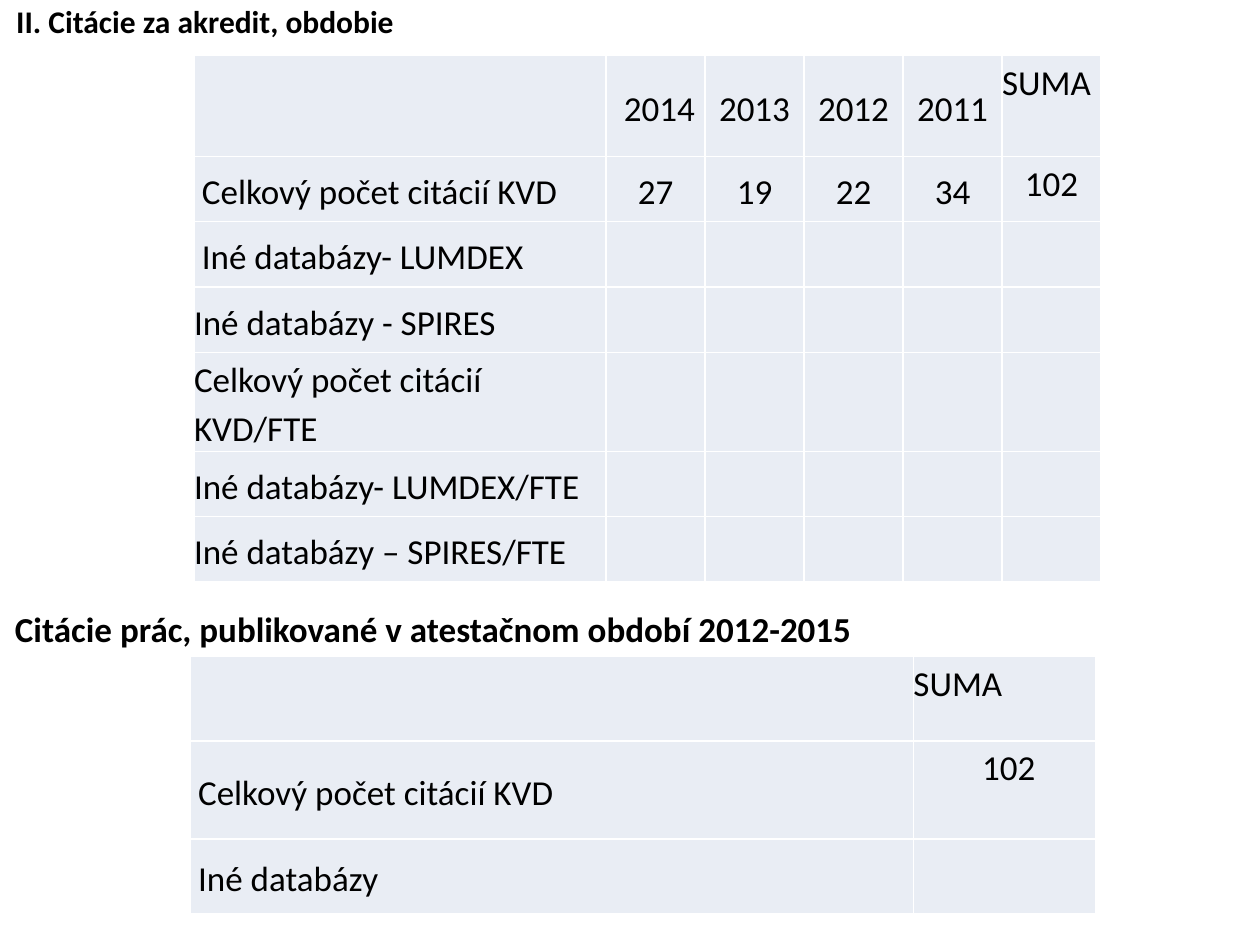
import pptx
import pptx.util
import pptx.dml.color
import pptx.enum.text
import lxml.etree
from pptx.util import Inches, Pt
from pptx.enum.text import PP_ALIGN, MSO_ANCHOR, MSO_AUTO_SIZE

BLACK = pptx.dml.color.RGBColor(0x00, 0x00, 0x00)
CELL_FILL = pptx.dml.color.RGBColor(0xE9, 0xED, 0xF4)
BORDER = pptx.dml.color.RGBColor(0xFF, 0xFF, 0xFF)
FONT = "Calibri"

HEADINGS = [
    ("II. Citácie za akredit, obdobie", 18, (0.03, -0.03, 3.22, 0.4), MSO_ANCHOR.TOP),
    ("Citácie prác, publikované v atestačnom období 2012-2015", 20,
     (0.02, 4.77, 6.89, 0.44), MSO_ANCHOR.MIDDLE),
]

TABLES = [
    {
        "at": (1.54, 0.44),
        "cols": [3.27] + [(7.2 - 3.27) / 5] * 5,
        "rows": [0.8] + [0.52] * 3 + [0.78] + [0.52] * 2,
        "cells": [
            ["", " 2014", "2013", "2012", "2011", "SUMA"],
            [" Celkový počet citácií KVD", "27", "19", "22", "34", "102"],
            [" Iné databázy- LUMDEX"],
            ["Iné databázy - SPIRES"],
            ["Celkový počet citácií KVD/FTE"],
            ["Iné databázy- LUMDEX/FTE"],
            ["Iné databázy – SPIRES/FTE"],
        ],
    },
    {
        "at": (1.51, 5.21),
        "cols": [5.74, 1.45],
        "rows": [0.67, 0.78, 0.59],
        "cells": [
            ["", "SUMA"],
            [" Celkový počet citácií KVD", " 102"],
            [" Iné databázy"],
        ],
    },
]


def style_run(p, size, bold=False):
    for r in p.runs:
        r.font.name = FONT
        r.font.size = Pt(size)
        r.font.bold = bold
        r.font.color.rgb = BLACK


def add_borders(cell):
    tcPr = cell._tc.get_or_add_tcPr()
    ns = "{%s}" % tcPr.nsmap["a"]
    for i, side in enumerate(("lnL", "lnR", "lnT", "lnB")):
        ln = lxml.etree.Element(ns + side, w=str(Pt(1)))
        fill = lxml.etree.SubElement(ln, ns + "solidFill")
        lxml.etree.SubElement(fill, ns + "srgbClr", val=str(BORDER))
        tcPr.insert(i, ln)


def fill_cell(cell, text, first_col, last_col):
    cell.fill.solid()
    cell.fill.fore_color.rgb = CELL_FILL
    cell.margin_left = cell.margin_right = cell.margin_top = cell.margin_bottom = 0
    add_borders(cell)
    if not text:
        return
    cell.vertical_anchor = MSO_ANCHOR.TOP if last_col else MSO_ANCHOR.MIDDLE
    cell.text_frame.text = text
    p = cell.text_frame.paragraphs[0]
    p.line_spacing = 1.15
    p.alignment = PP_ALIGN.LEFT if first_col or text == "SUMA" else PP_ALIGN.CENTER
    style_run(p, 20)


def add_citation_table(s, at, cols, rows, cells):
    box = [Inches(v) for v in (*at, sum(cols), sum(rows))]
    table = s.shapes.add_table(len(rows), len(cols), *box).table
    table.first_row = table.horz_banding = False
    for col, width in zip(table.columns, cols):
        col.width = Inches(width)
    for i, height in enumerate(rows):
        table.rows[i].height = Inches(height)
        for j in range(len(cols)):
            text = cells[i][j] if j < len(cells[i]) else ""
            fill_cell(table.cell(i, j), text, j == 0, j == len(cols) - 1)


def add_heading(s, text, size, at, anchor):
    tf = s.shapes.add_textbox(*[Inches(v) for v in at]).text_frame
    tf.word_wrap = False
    tf.auto_size = MSO_AUTO_SIZE.SHAPE_TO_FIT_TEXT
    tf.vertical_anchor = anchor
    tf.text = text
    style_run(tf.paragraphs[0], size, bold=True)


def main():
    prs = pptx.Presentation()
    prs.slide_width, prs.slide_height = Inches(10), Inches(7.5)
    s = prs.slides.add_slide(prs.slide_layouts[6])
    for table, heading in zip(TABLES, HEADINGS):
        add_citation_table(s, **table)
        add_heading(s, *heading)
    prs.save("out.pptx")


if __name__ == "__main__":
    main()
